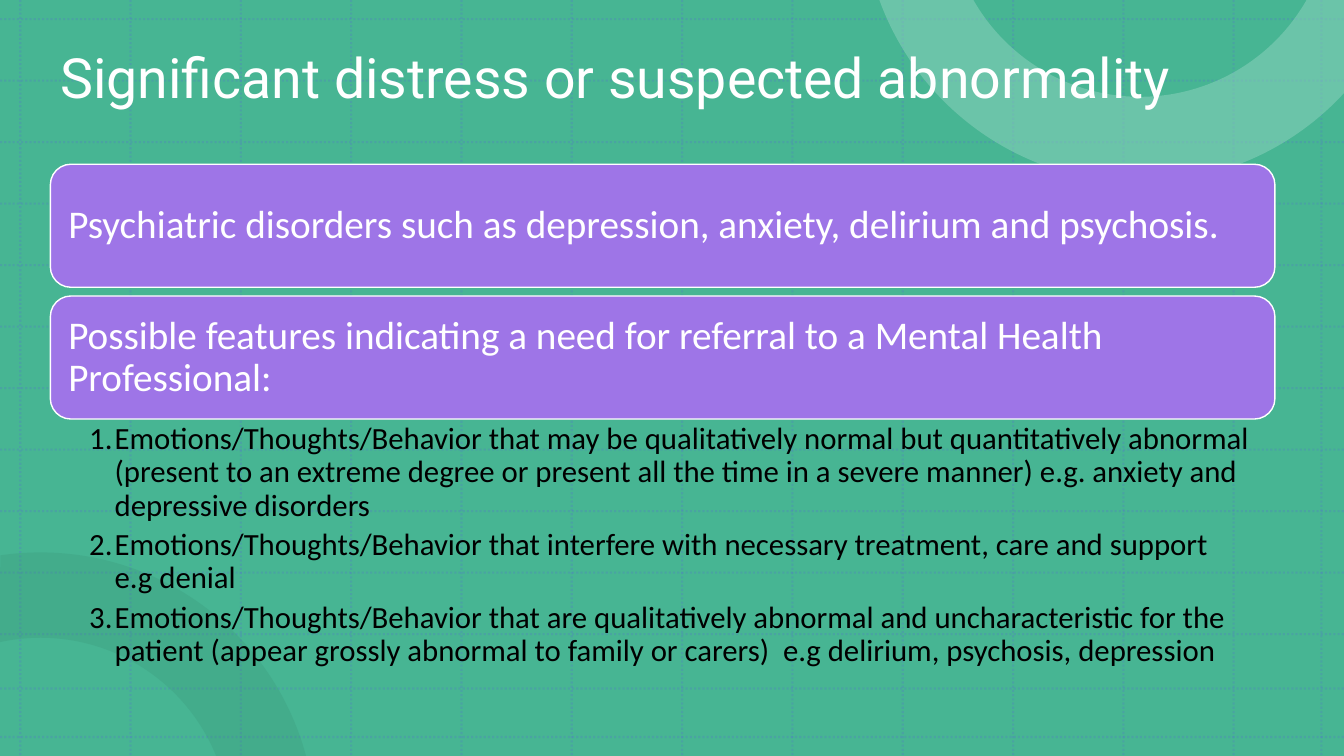
from math import cos, radians, sin, tan

from lxml import etree
from pptx import Presentation
from pptx.dml.color import RGBColor
from pptx.enum.dml import MSO_LINE
from pptx.enum.shapes import MSO_CONNECTOR, MSO_SHAPE
from pptx.enum.text import MSO_ANCHOR, PP_ALIGN
from pptx.oxml.ns import qn
from pptx.util import Cm, Pt

STRAIGHT = MSO_CONNECTOR.STRAIGHT
DOTTED = MSO_LINE.ROUND_DOT
RECTANGLE, ROUNDED = MSO_SHAPE.RECTANGLE, MSO_SHAPE.ROUNDED_RECTANGLE
TOP, MIDDLE = MSO_ANCHOR.TOP, MSO_ANCHOR.MIDDLE
LEFT = PP_ALIGN.LEFT

GREEN = RGBColor(0x47, 0xB5, 0x93)
DARK_GREEN = RGBColor(0x35, 0x88, 0x6E)
LIGHT_GREEN = RGBColor(0x90, 0xD3, 0xBF)
BLUE = RGBColor(0x56, 0x5F, 0xE2)
PURPLE = RGBColor(0x9E, 0x75, 0xE7)
WHITE = RGBColor(0xFF, 0xFF, 0xFF)
BLACK = RGBColor(0, 0, 0)

WIDTH, HEIGHT = 33.87, 19.05


def set_opacity(shape, percent):
    color = shape.element.spPr.xpath(".//a:srgbClr")[0]
    etree.SubElement(color, qn("a:alpha")).set("val", str(percent * 1000))


def write(paragraph, text, font, size, color):
    paragraph.alignment = LEFT
    paragraph.line_spacing = 0.9
    run = paragraph.add_run()
    run.text = text
    run.font.name = font
    run.font.size = Pt(size)
    run.font.color.rgb = color


prs = Presentation()
prs.slide_width, prs.slide_height = Cm(WIDTH), Cm(HEIGHT)
slide = prs.slides.add_slide(prs.slide_layouts[6])

backdrop = slide.shapes.add_shape(RECTANGLE, 0, 0, Cm(WIDTH), Cm(HEIGHT))
backdrop.shadow.inherit = False
backdrop.fill.solid()
backdrop.fill.fore_color.rgb = GREEN
backdrop.line.fill.background()

columns = [0.51 + 2.78 * i for i in range(12)] + [33.3]
rows = [0.48 + 1.55 * i for i in range(11)] + [17.35, 18.57]
grid_ends = [(x, 0, x, HEIGHT) for x in columns] + [(0, y, WIDTH, y) for y in rows]
grid = slide.shapes.add_group_shape()
for ends in grid_ends:
    grid_line = grid.shapes.add_connector(STRAIGHT, *[Cm(v) for v in ends])
    grid_line.line.color.rgb = BLUE
    grid_line.line.width = Pt(1.5)
    grid_line.line.dash_style = DOTTED
    set_opacity(grid_line, 20)
    etree.SubElement(grid_line.element.spPr, qn("a:effectLst"))

rings = [
    (1.02, 20.85, -1, (6.93, -8.4, 74.9), (4.78, 67.8, -12.3), [], DARK_GREEN, 20),
    (28.73, -2.39, 1, (6.99, -70, 47.3), (4.83, 60.35, -60.35), [(WIDTH, 0)], LIGHT_GREEN, 50),
]
for center_x, center_y, direction, outer, inner, corner, color, opacity in rings:
    arcs = []
    for radius, start, end in (outer, inner):
        unit_points = [(sin(radians(start)), cos(radians(start)))]
        for a, b in ((radians(start), 0), (0, radians(end))):
            reach = 4 / 3 * tan((b - a) / 4)
            unit_points += [
                (sin(a) + reach * cos(a), cos(a) - reach * sin(a)),
                (sin(b) - reach * cos(b), cos(b) + reach * sin(b)),
                (sin(b), cos(b)),
            ]
        arcs.append([(center_x + radius * x, center_y + direction * radius * y)
                     for x, y in unit_points])
    outline = [(Cm(x), Cm(y)) for x, y in arcs[0] + corner + arcs[1]]
    builder = slide.shapes.build_freeform(*outline[0])
    builder.add_line_segments(outline[1:], close=True)
    ring = builder.convert_to_shape()
    segments = ring.element.spPr.xpath(".//a:lnTo")
    inner_first = 7 + len(corner)
    for first in (0, 3, inner_first, inner_first + 3):
        curve = etree.Element(qn("a:cubicBezTo"))
        segments[first].addprevious(curve)
        for segment in segments[first:first + 3]:
            curve.append(segment[0])
            segment.getparent().remove(segment)
    ring.shadow.inherit = False
    ring.fill.solid()
    ring.fill.fore_color.rgb = color
    ring.line.fill.background()
    set_opacity(ring, opacity)

title = slide.shapes.add_textbox(Cm(1.27), Cm(1.02), Cm(29.79), Cm(3.68)).text_frame
title.word_wrap = True
title.vertical_anchor = TOP
title.margin_top = Cm(0.25)
write(title.paragraphs[0], "Significant distress or suspected abnormality", "Roboto", 39.6, WHITE)

statements = [
    "Psychiatric disorders such as depression, anxiety, delirium and psychosis.",
    "Possible features indicating a need for referral to a Mental Health Professional:",
]
for i, statement in enumerate(statements):
    card = slide.shapes.add_shape(ROUNDED, Cm(1.27), Cm(4.14 + 3.32 * i), Cm(30.86), Cm(3.1))
    card.shadow.inherit = False
    card.fill.solid()
    card.fill.fore_color.rgb = PURPLE
    card.line.color.rgb = WHITE
    card.line.width = Pt(1)
    frame = card.text_frame
    frame.word_wrap = True
    frame.vertical_anchor = MIDDLE
    frame.margin_left = frame.margin_right = Cm(0.3)
    frame.margin_top = frame.margin_bottom = Cm(0.3)
    write(frame.paragraphs[0], statement, "Calibri", 28, WHITE)

features = [
    "Emotions/Thoughts/Behavior that may be qualitatively normal but quantitatively abnormal "
    "(present to an extreme degree or present all the time in a severe manner) "
    "e.g. anxiety and depressive disorders",
    "Emotions/Thoughts/Behavior that interfere with necessary treatment, care and support "
    "e.g denial",
    "Emotions/Thoughts/Behavior that are qualitatively abnormal and uncharacteristic for the "
    "patient (appear grossly abnormal to family or carers)  e.g delirium, psychosis, depression",
]
feature_list = slide.shapes.add_textbox(Cm(1.27), Cm(10.54), Cm(30.86), Cm(7.42)).text_frame
feature_list.word_wrap = True
feature_list.margin_left, feature_list.margin_right = Cm(0.98), Cm(0.56)
feature_list.margin_top = feature_list.margin_bottom = Cm(0.12)
for i, feature in enumerate(features):
    item = feature_list.add_paragraph() if i else feature_list.paragraphs[0]
    write(item, feature, "Calibri", 22, BLACK)
    item.space_after = Pt(4.4)
    properties = item._p.get_or_add_pPr()
    properties.set("marL", str(Cm(0.64)))
    properties.set("indent", str(-Cm(0.64)))
    etree.SubElement(properties, qn("a:buAutoNum")).set("type", "arabicPeriod")

prs.save("out.pptx")
